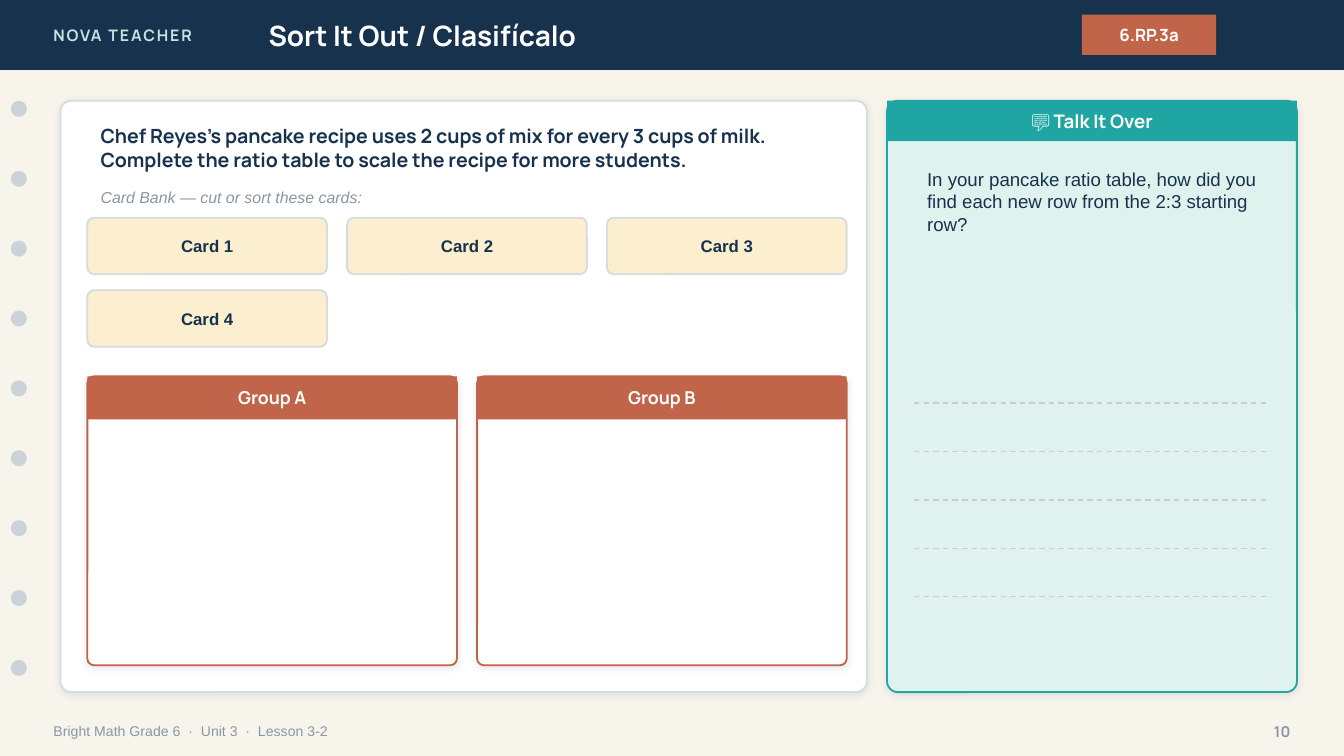
from dataclasses import dataclass

from lxml.etree import SubElement
from pptx import Presentation
from pptx.dml.color import RGBColor
from pptx.enum.dml import MSO_LINE_DASH_STYLE as Dash
from pptx.enum.shapes import MSO_CONNECTOR as Connector, MSO_SHAPE as Shape
from pptx.enum.text import MSO_ANCHOR as Anchor, PP_ALIGN as Align
from pptx.oxml.ns import qn
from pptx.util import Pt


@dataclass(frozen=True)
class Theme:
    # Fonts
    display: str = "Manrope"
    body: str = "Arial"
    # Colours
    paper: str = "F7F4EC"
    navy: str = "17324D"
    mint: str = "BFE6E2"
    white: str = "FFFFFF"
    clay: str = "C0654A"
    hole: str = "CBD3D9"
    muted: str = "8A96A3"
    border: str = "D6DBDF"
    cream: str = "FBEFD0"
    teal: str = "1FA6A2"
    pale_teal: str = "DFF2EE"
    rule: str = "C7CDD2"
    shadow: str = "1C2E42"
    # Type sizes
    title: float = 15
    task: float = 10.5
    talk: float = 10
    group: float = 9.5
    label: float = 9
    small: float = 8.5
    page: float = 8
    footer: float = 7.5


THEME = Theme()


def color(value):
    return RGBColor.from_string(value)


def write(shape, text, size, ink, font=THEME.body, bold=False, italic=False,
          align=Align.LEFT, anchor=Anchor.MIDDLE, spacing=None):
    """Put one formatted paragraph into a shape."""
    frame = shape.text_frame
    frame.word_wrap = True
    frame.vertical_anchor = anchor
    paragraph = frame.paragraphs[0]
    paragraph.alignment = align
    run = paragraph.add_run()
    run.text = text
    run.font.name = font
    run.font.size = Pt(size)
    run.font.bold = bold
    run.font.italic = italic
    run.font.color.rgb = color(ink)
    if spacing:
        run._r.get_or_add_rPr().set("spc", str(spacing * 100))


def add_text(slide, box, text, size, ink, **style):
    shape = slide.shapes.add_textbox(*map(Pt, box))
    write(shape, text, size, ink, **style)


def add_block(slide, kind, box, fill, line=None, radius=None):
    """Add a filled shape; radius is the corner radius in points."""
    shape = slide.shapes.add_shape(kind, *map(Pt, box))
    shape.shadow.inherit = False
    shape.fill.solid()
    shape.fill.fore_color.rgb = color(fill)
    if line:
        shape.line.color.rgb = color(line)
        shape.line.width = Pt(1)
    else:
        shape.line.fill.background()
    if radius:
        shape.adjustments[0] = radius / min(box[2:])
    return shape


def add_panel(slide, box, fill, line, radius):
    """Add a rounded panel with a soft shadow below it."""
    panel = add_block(slide, Shape.ROUNDED_RECTANGLE, box, fill, line, radius)
    effects = panel._element.spPr.find(qn("a:effectLst"))
    shadow = SubElement(effects, qn("a:outerShdw"), blurRad=str(Pt(4)),
                        dist=str(Pt(1)), dir="5400000", algn="bl", rotWithShape="0")
    tint = SubElement(shadow, qn("a:srgbClr"), val=THEME.shadow)
    SubElement(tint, qn("a:alpha"), val="10000")


def add_headed_panel(slide, box, heading, header_height, size, fill, accent, radius):
    left, top, width, _ = box
    add_panel(slide, box, fill, accent, radius)
    header = add_block(slide, Shape.RECTANGLE, (left, top, width, header_height), accent)
    write(header, heading, size, THEME.white, font=THEME.display, bold=True,
          align=Align.CENTER)


def add_writing_line(slide, left, right, y):
    line = slide.shapes.add_connector(Connector.STRAIGHT, Pt(left), Pt(y), Pt(right), Pt(y))
    line.line.color.rgb = color(THEME.rule)
    line.line.width = Pt(0.75)
    line.line.dash_style = Dash.DASH
    SubElement(line._element.spPr, qn("a:effectLst"))


def add_frame(slide):
    # Header band
    add_block(slide, Shape.RECTANGLE, (0, 0, 720, 37.44), THEME.navy)
    add_text(slide, (21.6, 0, 172.8, 37.44), "NOVA TEACHER", THEME.small, THEME.mint,
             font=THEME.display, bold=True, spacing=1)
    add_text(slide, (136.8, 0, 403.2, 37.44), "Sort It Out / Clasifícalo", THEME.title,
             THEME.white, font=THEME.display, bold=True)
    badge = add_block(slide, Shape.RECTANGLE, (579.6, 7.92, 72, 21.6), THEME.clay)
    write(badge, "6.RP.3a", THEME.label, THEME.white, font=THEME.display, bold=True,
          align=Align.CENTER)

    # Binder holes
    for index in range(9):
        add_block(slide, Shape.OVAL, (5.76, 54 + index * 37.44, 8.64, 8.64), THEME.hole)

    # Footer
    add_text(slide, (21.6, 381.6, 504, 20.16),
             "Bright Math Grade 6  ·  Unit 3  ·  Lesson 3-2", THEME.footer, THEME.muted)
    add_text(slide, (662.4, 381.6, 36, 20.16), "10", THEME.page, THEME.muted,
             font=THEME.display, bold=True, align=Align.RIGHT)


def add_sorting_task(slide):
    left, width, gap = 46.8, 406.8, 10.8
    add_panel(slide, (32.4, 54, 432, 316.8), THEME.white, THEME.border, 5.76)
    add_text(slide, (left, 64.8, 403.2, 28.8),
             "Chef Reyes's pancake recipe uses 2 cups of mix for every 3 cups of milk. "
             "Complete the ratio table to scale the recipe for more students.",
             THEME.task, THEME.navy, font=THEME.display, bold=True)
    add_text(slide, (left, 97.2, 403.2, 17.28), "Card Bank — cut or sort these cards:",
             THEME.small, THEME.muted, italic=True)

    # Card bank, three to a row
    columns = 3
    card_width = (width - (columns - 1) * gap) / columns
    for index in range(4):
        row, column = divmod(index, columns)
        box = (left + column * (card_width + gap), 116.64 + row * 38.88, card_width, 30.24)
        card = add_block(slide, Shape.ROUNDED_RECTANGLE, box, THEME.cream, THEME.border, 3.6)
        write(card, f"Card {index + 1}", THEME.label, THEME.navy, bold=True,
              align=Align.CENTER)

    # Sorting groups
    group_width = (width - gap) / 2
    for index, name in enumerate("AB"):
        box = (left + index * (group_width + gap), 201.6, group_width, 154.8)
        add_headed_panel(slide, box, f"Group {name}", 23.04, THEME.group,
                         THEME.white, THEME.clay, 3.6)


def add_discussion(slide):
    add_headed_panel(slide, (475.2, 54, 219.6, 316.8), "💬 Talk It Over", 21.6,
                     THEME.talk, THEME.pale_teal, THEME.teal, 5.76)
    add_text(slide, (489.6, 86.4, 194.4, 108),
             "In your pancake ratio table, how did you find each new row "
             "from the 2:3 starting row?",
             THEME.talk, THEME.navy, anchor=Anchor.TOP)
    for index in range(5):
        add_writing_line(slide, 489.6, 680.4, 216 + index * 25.92)


def main():
    presentation = Presentation()
    presentation.slide_width = Pt(720)
    presentation.slide_height = Pt(405)
    slide = presentation.slides.add_slide(presentation.slide_layouts[6])
    slide.background.fill.solid()
    slide.background.fill.fore_color.rgb = color(THEME.paper)
    add_frame(slide)
    add_sorting_task(slide)
    add_discussion(slide)
    presentation.save("out.pptx")


if __name__ == "__main__":
    main()
